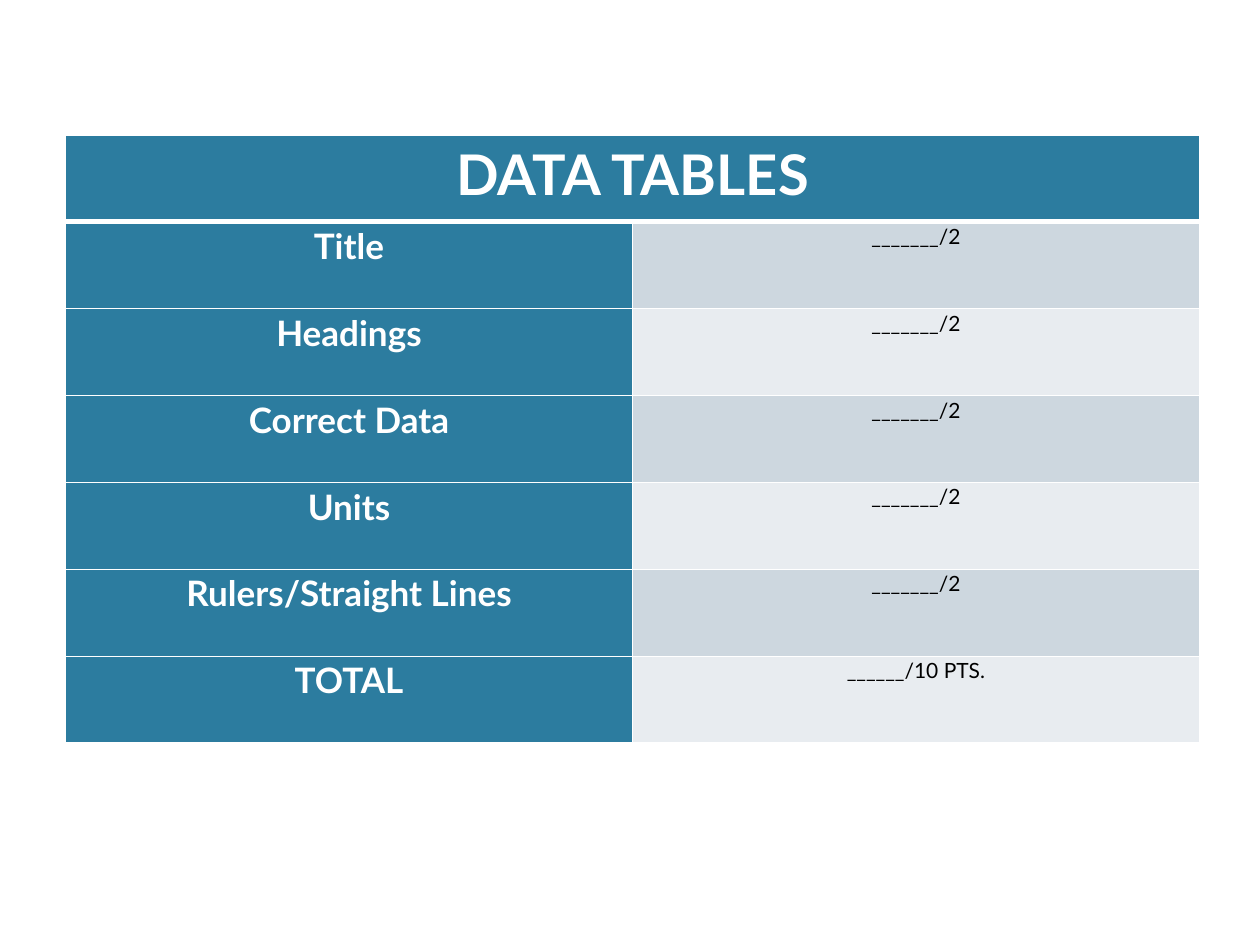
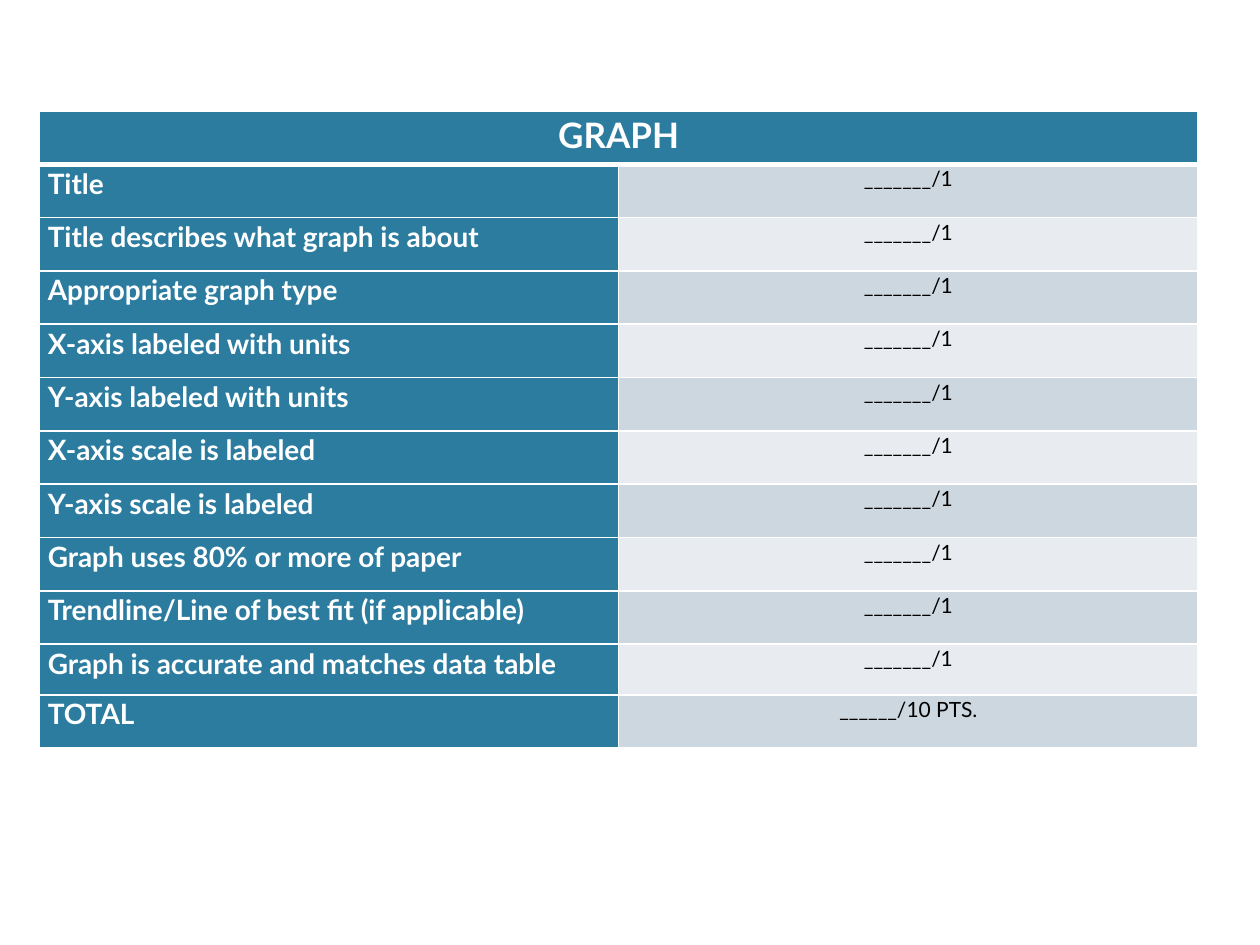
from dataclasses import dataclass

from lxml.etree import SubElement
from pptx import Presentation
from pptx.dml.color import RGBColor
from pptx.enum.text import MSO_ANCHOR, PP_ALIGN
from pptx.oxml.ns import qn
from pptx.util import Inches, Pt


@dataclass(frozen=True)
class Theme:
    font: str = "Lato"
    label_fill: str = "2C7C9F"
    bands: tuple = ("CDD7DF", "E8ECF0")
    light: str = "FFFFFF"
    dark: str = "000000"
    score_size: int = 12
    line_spacing: float = 1.07
    side_margin: float = 0.07
    border: int = 1
    header_rule: int = 3


@dataclass(frozen=True)
class Rubric:
    heading: str
    heading_size: int
    label_size: int
    label_align: PP_ALIGN
    criteria: tuple
    points: int  # for each criterion
    box: tuple  # left, top, width, height in inches
    row_shares: tuple  # relative row heights


THEME = Theme()
BLANK_LAYOUT = 6

DATA_TABLES = Rubric(
    heading="DATA TABLES", heading_size=32,
    label_size=20, label_align=PP_ALIGN.CENTER,
    criteria=("Title", "Headings", "Correct Data", "Units", "Rulers/Straight Lines"),
    points=2,
    box=(0.52, 1.07, 9.0, 4.83),
    row_shares=(1,) * 7,
)

GRAPH = Rubric(
    heading="GRAPH", heading_size=20,
    label_size=16, label_align=PP_ALIGN.LEFT,
    criteria=(
        "Title",
        "Title describes what graph is about",
        "Appropriate graph type",
        "X-axis labeled with units",
        "Y-axis labeled with units",
        "X-axis scale is labeled",
        "Y-axis scale is labeled",
        "Graph uses 80% or more of paper",
        "Trendline/Line of best fit (if applicable)",
        "Graph is accurate and matches data table",
    ),
    points=1,
    box=(0.31, 0.88, 9.2, 5.06),
    row_shares=(1,) * 10 + (0.95, 1),
)


def set_borders(cell, top, bottom):
    """Rule all four sides; called before the fill, which must come after lines."""
    properties = cell._tc.get_or_add_tcPr()
    sides = {"lnL": THEME.border, "lnR": THEME.border, "lnT": top, "lnB": bottom}
    for side, width in sides.items():
        line = SubElement(properties, qn(f"a:{side}"), w=str(Pt(width)))
        fill = SubElement(line, qn("a:solidFill"))
        SubElement(fill, qn("a:srgbClr"), val=THEME.light)


def paint_cell(cell, row, fill):
    set_borders(
        cell,
        top=THEME.header_rule if row == 1 else THEME.border,
        bottom=THEME.header_rule if row == 0 else THEME.border,
    )
    cell.fill.solid()
    cell.fill.fore_color.rgb = RGBColor.from_string(fill)
    cell.margin_left = cell.margin_right = Inches(THEME.side_margin)
    cell.margin_top = cell.margin_bottom = 0
    cell.vertical_anchor = MSO_ANCHOR.TOP


def write_cell(cell, text, size, color, bold, align=PP_ALIGN.CENTER):
    cell.text = text
    paragraph = cell.text_frame.paragraphs[0]
    paragraph.alignment = align
    paragraph.line_spacing = THEME.line_spacing
    font = paragraph.font
    font.name, font.size, font.bold = THEME.font, Pt(size), bold
    font.color.rgb = RGBColor.from_string(color)


def add_rubric_table(slide, rubric):
    left, top, width, height = (Inches(length) for length in rubric.box)
    row_count = len(rubric.criteria) + 2
    table = slide.shapes.add_table(row_count, 2, left, top, width, height).table
    table.first_row = table.horz_banding = False

    # Row heights and cell backgrounds
    for index, share in enumerate(rubric.row_shares):
        table.rows[index].height = int(height * share / sum(rubric.row_shares))
        score_fill = THEME.bands[(index - 1) % 2] if index else THEME.label_fill
        paint_cell(table.cell(index, 0), index, THEME.label_fill)
        paint_cell(table.cell(index, 1), index, score_fill)

    # Heading across both columns
    heading = table.cell(0, 0)
    heading.merge(table.cell(0, 1))
    write_cell(heading, rubric.heading, rubric.heading_size, THEME.light, True)

    # Criteria with their scores, then the total
    total = rubric.points * len(rubric.criteria)
    lines = [(label, f"_______/{rubric.points}") for label in rubric.criteria]
    lines.append(("TOTAL", f"______/{total} PTS."))
    for row, (label, score) in enumerate(lines, start=1):
        write_cell(table.cell(row, 0), label, rubric.label_size, THEME.light, True,
                   rubric.label_align)
        write_cell(table.cell(row, 1), score, THEME.score_size, THEME.dark, False)


def main():
    presentation = Presentation()
    presentation.slide_width, presentation.slide_height = Inches(10), Inches(7.5)
    for rubric in (DATA_TABLES, GRAPH):
        slide = presentation.slides.add_slide(presentation.slide_layouts[BLANK_LAYOUT])
        add_rubric_table(slide, rubric)
    presentation.save("out.pptx")


if __name__ == "__main__":
    main()
